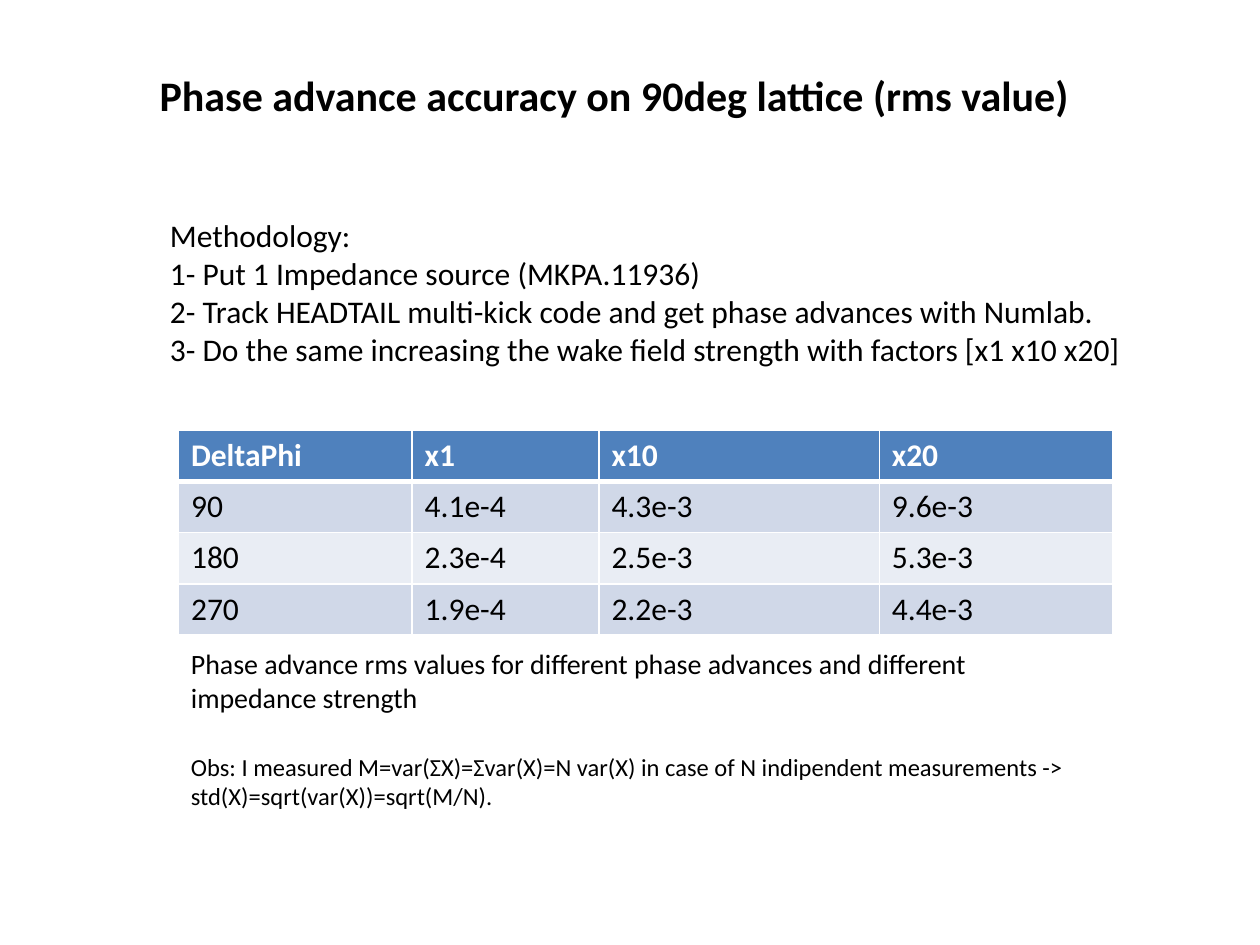
import pptx
import pptx.dml.color
import pptx.enum.text
import pptx.oxml
import pptx.oxml.ns
import pptx.util

RGBColor = pptx.dml.color.RGBColor
BLACK = RGBColor(0x00, 0x00, 0x00)
WHITE = RGBColor(0xFF, 0xFF, 0xFF)
HEADER_BLUE = RGBColor(0x4F, 0x81, 0xBD)
BAND_DARK = RGBColor(0xD0, 0xD8, 0xE8)
BAND_LIGHT = RGBColor(0xE9, 0xED, 0xF4)
CENTER = pptx.enum.text.PP_ALIGN.CENTER

METHODOLOGY = [
    "Methodology:",
    "1- Put 1 Impedance source (MKPA.11936)",
    "2- Track HEADTAIL multi-kick code and get phase advances with Numlab.",
    "3- Do the same increasing the wake field strength with factors [x1 x10 x20]",
]
RMS_VALUES = [
    ["DeltaPhi", "x1", "x10", "x20"],
    ["90", "4.1e-4", "4.3e-3", "9.6e-3"],
    ["180", "2.3e-4", "2.5e-3", "5.3e-3"],
    ["270", "1.9e-4", "2.2e-3", "4.4e-3"],
]
COLUMN_SHARES = [10, 8, 12, 10]


def write_text(text_frame, lines, size=18, font="Calibri", color=BLACK, bold=False, align=None):
    """Write one paragraph per line, all in the same format."""
    for index, line in enumerate(lines):
        paragraph = text_frame.paragraphs[0] if index == 0 else text_frame.add_paragraph()
        paragraph.alignment = align
        run = paragraph.add_run()
        run.text = line
        run.font.name = font
        run.font.size = pptx.util.Pt(size)
        run.font.bold = bold
        run.font.color.rgb = color


class SlideBuilder:
    """Places elements on a slide divided into 120 columns and 90 rows."""

    COLUMNS = 120
    ROWS = 90

    def __init__(self, presentation):
        self.column = presentation.slide_width / self.COLUMNS
        self.row = presentation.slide_height / self.ROWS
        self.slide = presentation.slides.add_slide(presentation.slide_layouts[6])

    def box(self, left, top, width, height):
        return (int(left * self.column), int(top * self.row),
                int(width * self.column), int(height * self.row))

    def text(self, lines, left, top, width, height, **style):
        shape = self.slide.shapes.add_textbox(*self.box(left, top, width, height))
        shape.text_frame.word_wrap = True
        write_text(shape.text_frame, lines, **style)

    def border(self, cell, side, points):
        """Add a white border; call in the order L, R, T, B, before the fill."""
        namespace = pptx.oxml.ns.nsdecls("a")
        cell._tc.get_or_add_tcPr().append(pptx.oxml.parse_xml(
            f'<a:ln{side} {namespace} w="{pptx.util.Pt(points)}"><a:solidFill>'
            f'<a:srgbClr val="{WHITE}"/></a:solidFill></a:ln{side}>'))

    def table(self, values, shares, left, top, width, height):
        frame = self.slide.shapes.add_table(
            len(values), len(shares), *self.box(left, top, width, height))
        table = frame.table
        for column, share in zip(table.columns, shares):
            column.width = int(width * self.column * share / sum(shares))
        for row_index, row in enumerate(values):
            header = row_index == 0
            band = BAND_DARK if row_index % 2 else BAND_LIGHT
            for column_index, value in enumerate(row):
                cell = table.cell(row_index, column_index)
                # The rule under the header is thicker than the others
                top_width = 3 if row_index == 1 else 1
                bottom_width = 3 if header else 1
                for side, points in zip("LRTB", (1, 1, top_width, bottom_width)):
                    self.border(cell, side, points)
                cell.fill.solid()
                cell.fill.fore_color.rgb = HEADER_BLUE if header else band
                write_text(cell.text_frame, [value], bold=header,
                           color=WHITE if header else BLACK)


def main():
    presentation = pptx.Presentation()
    presentation.slide_width = pptx.util.Inches(10)
    presentation.slide_height = pptx.util.Inches(7.5)
    builder = SlideBuilder(presentation)

    # Table of rms values
    builder.table(RMS_VALUES, COLUMN_SHARES, 17, 41, 89, 19.47)

    # Title and methodology
    builder.text(["Phase advance accuracy on 90deg lattice (rms value)"],
                 13, 6, 91, 6, size=24, bold=True, align=CENTER)
    builder.text(METHODOLOGY, 15, 20, 98, 15.7)

    # Table caption and observation
    builder.text(["Phase advance rms values for different phase advances "
                  "and different impedance strength"], 17, 61, 88, 7.7, size=16)
    builder.text(["Obs: I measured M=var(ΣX)=Σvar(X)=N var(X) in case of N indipendent "
                  "measurements -> std(X)=sqrt(var(X))=sqrt(M/N)."],
                 17, 71, 97, 6.8, size=14)

    presentation.save("out.pptx")


if __name__ == "__main__":
    main()
